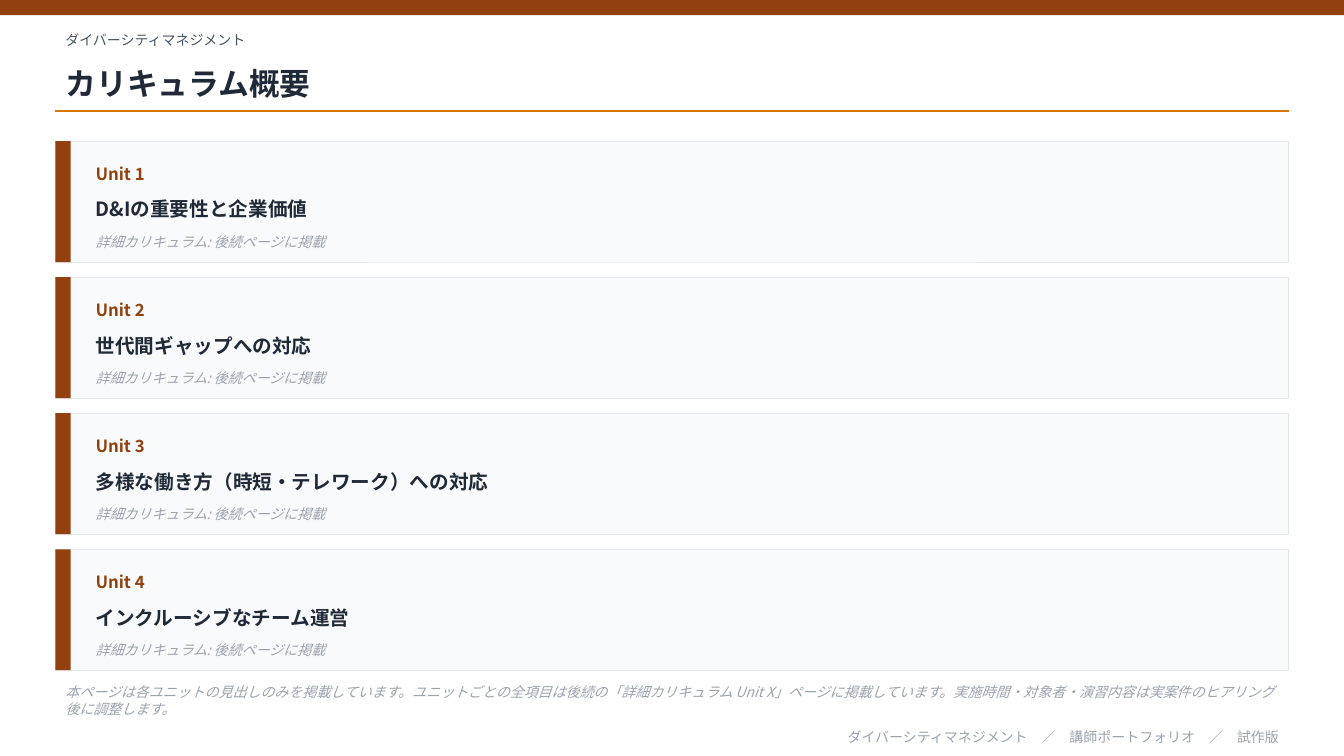
from lxml import etree
from pptx import Presentation
from pptx.dml.color import RGBColor
from pptx.enum.shapes import MSO_CONNECTOR, MSO_SHAPE
from pptx.enum.text import MSO_ANCHOR, MSO_AUTO_SIZE, PP_ALIGN
from pptx.oxml.ns import qn
from pptx.util import Inches, Pt

RECTANGLE = MSO_SHAPE.RECTANGLE
STRAIGHT = MSO_CONNECTOR.STRAIGHT
MIDDLE = MSO_ANCHOR.MIDDLE
NO_AUTOFIT = MSO_AUTO_SIZE.NONE
LEFT, RIGHT = PP_ALIGN.LEFT, PP_ALIGN.RIGHT

FONT = "Noto Sans CJK JP"
BROWN, AMBER = "92400E", "D97706"
INK, SLATE, MUTED = "1F2937", "4B5563", "9CA3AF"
CARD_FILL, CARD_LINE = "F9FAFB", "E5E7EB"

WIDTH, HEIGHT = 13.33, 7.5
MARGIN = 0.55
CONTENT_WIDTH = WIDTH - 2 * MARGIN
BAR_WIDTH = 0.15
CARD_TOP, CARD_HEIGHT, CARD_GAP = 1.4, 1.2, 0.15

COURSE = "ダイバーシティマネジメント"
UNITS = [
    "D&Iの重要性と企業価値",
    "世代間ギャップへの対応",
    "多様な働き方（時短・テレワーク）への対応",
    "インクルーシブなチーム運営",
]
UNIT_DETAIL = "詳細カリキュラム: 後続ページに掲載"
NOTE = (
    "本ページは各ユニットの見出しのみを掲載しています。"
    "ユニットごとの全項目は後続の「詳細カリキュラム Unit X」ページに掲載しています。"
    "実施時間・対象者・演習内容は実案件のヒアリング後に調整します。"
)
FOOTER = f"{COURSE}　／　講師ポートフォリオ　／　試作版"


def color(value):
    return RGBColor.from_string(value)


def write(shape, text, size, ink, bold=False, italic=False, align=LEFT):
    frame = shape.text_frame
    frame.word_wrap = True
    frame.auto_size = NO_AUTOFIT
    frame.vertical_anchor = MIDDLE
    para = frame.paragraphs[0]
    para.alignment = align
    span = para.add_run()
    span.text = text
    font = span.font
    font.name, font.size = FONT, Pt(size)
    font.bold, font.italic = bold, italic
    font.color.rgb = color(ink)
    # Japanese glyphs take the East Asian typeface
    latin = span._r.rPr.find(qn("a:latin"))
    east_asian = etree.Element(qn("a:ea"), typeface=FONT)
    latin.addnext(east_asian)


def add_text(page, box, text, size, ink, **style):
    shape = page.shapes.add_textbox(*map(Inches, box))
    write(shape, text, size, ink, **style)


def add_block(page, box, fill, line=None):
    block = page.shapes.add_shape(RECTANGLE, *map(Inches, box))
    block.shadow.inherit = False
    block.fill.solid()
    block.fill.fore_color.rgb = color(fill)
    if line:
        block.line.color.rgb = color(line)
        block.line.width = Pt(0.5)
    else:
        block.line.fill.background()


def add_header(page, left, width):
    add_block(page, (0, 0, WIDTH, BAR_WIDTH), BROWN)
    add_text(page, (left, 0.25, width, 0.3), COURSE, 10, SLATE)
    title = page.shapes.title
    title.left, title.top = Inches(left), Inches(0.55)
    title.width, title.height = Inches(width), Inches(0.55)
    write(title, "カリキュラム概要", 22, INK, bold=True)
    rule_ends = (left, 1.1, left + width, 1.1)
    rule = page.shapes.add_connector(STRAIGHT, *map(Inches, rule_ends))
    rule.line.color.rgb = color(AMBER)
    rule.line.width = Pt(1)
    etree.SubElement(rule._element.spPr, qn("a:effectLst"))


def add_unit_card(page, box, number, heading):
    left, top, width, height = box
    add_block(page, box, CARD_FILL, CARD_LINE)
    add_block(page, (left, top, BAR_WIDTH, height), BROWN)
    text_left, text_width = left + 0.3, width - 0.5
    add_text(page, (text_left, top + 0.12, 1.5, 0.4),
             f"Unit {number}", 12, BROWN, bold=True)
    add_text(page, (text_left, top + 0.45, text_width, 0.45),
             heading, 14, INK, bold=True)
    add_text(page, (text_left, top + 0.85, text_width, 0.3),
             UNIT_DETAIL, 10, MUTED, italic=True)


def add_footer(page, left, width):
    add_text(page, (left, 6.75, width, 0.4), NOTE, 10, MUTED, italic=True)
    add_text(page, (left, 7.2, width, 0.22), FOOTER, 10, MUTED, align=RIGHT)


def main():
    deck = Presentation()
    deck.slide_width, deck.slide_height = Inches(WIDTH), Inches(HEIGHT)
    page = deck.slides.add_slide(deck.slide_layouts.get_by_name("Title Only"))
    add_header(page, MARGIN, CONTENT_WIDTH)
    for index, heading in enumerate(UNITS):
        top = CARD_TOP + index * (CARD_HEIGHT + CARD_GAP)
        box = (MARGIN, top, CONTENT_WIDTH, CARD_HEIGHT)
        add_unit_card(page, box, index + 1, heading)
    add_footer(page, MARGIN, CONTENT_WIDTH)
    deck.save("out.pptx")


if __name__ == "__main__":
    main()
